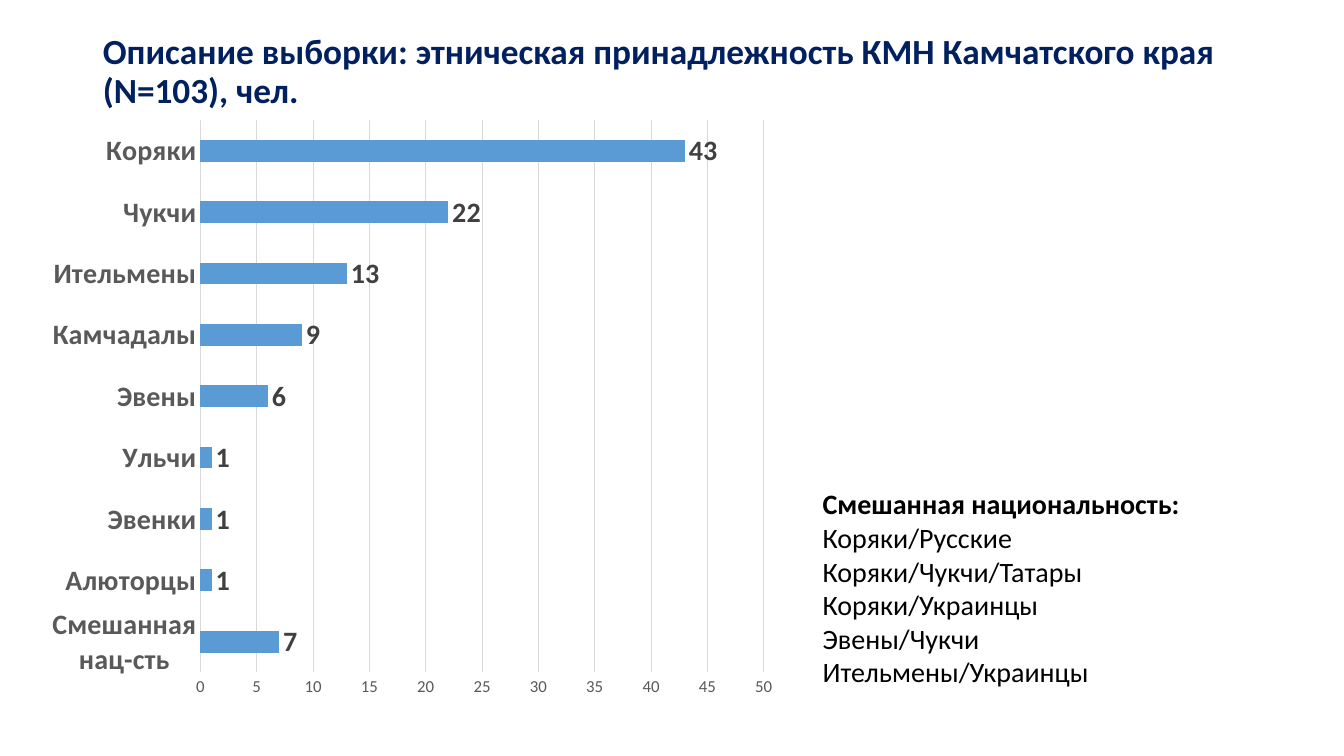
from lxml import etree
from pptx import Presentation
from pptx.chart.data import CategoryChartData as ChartData
from pptx.dml.color import RGBColor as RGB
from pptx.enum.chart import XL_CHART_TYPE as Kind
from pptx.enum.chart import XL_LABEL_POSITION as Place
from pptx.enum.chart import XL_TICK_MARK as Tick
from pptx.enum.text import MSO_ANCHOR as Anchor
from pptx.enum.text import MSO_AUTO_SIZE as Fit
from pptx.oxml.ns import qn
from pptx.util import Inches, Pt

COLORS = {"title": "002060", "text": "000000", "axis": "595959",
          "label": "404040", "grid": "D9D9D9", "bar": "5B9BD5"}
PEOPLES = {"Смешанная нац-сть": 7, "Алюторцы": 1, "Эвенки": 1,
           "Ульчи": 1, "Эвены": 6, "Камчадалы": 9,
           "Ительмены": 13, "Чукчи": 22, "Коряки": 43}
MIXED = ["Смешанная национальность:", "Коряки/Русские",
         "Коряки/Чукчи/Татары", "Коряки/Украинцы",
         "Эвены/Чукчи", "Ительмены/Украинцы"]


class Page:
    face = "Calibri"

    def __init__(self, deck):
        self.slide = deck.slides.add_slide(deck.slide_layouts[5])

    def style(self, font, size, color, bold=False):
        font.name, font.size, font.bold = self.face, Pt(size), bold
        font.color.rgb = RGB.from_string(COLORS[color])

    def title(self, text, box):
        shape = self.slide.shapes.title
        shape.left, shape.top, shape.width, shape.height = map(Inches, box)
        frame = shape.text_frame
        frame.text = text
        frame.word_wrap, frame.auto_size = True, Fit.NONE
        frame.vertical_anchor = Anchor.MIDDLE
        par = frame.paragraphs[0]
        par.alignment, par.line_spacing = 1, 0.9
        self.style(par.runs[0].font, 25.2, "title", True)

    def note(self, lines, box):
        shape = self.slide.shapes.add_textbox(*map(Inches, box))
        frame = shape.text_frame
        frame.text = "\n".join(lines)
        frame.word_wrap, frame.auto_size = True, Fit.SHAPE_TO_FIT_TEXT
        for i, par in enumerate(frame.paragraphs):
            self.style(par.runs[0].font, 20, "text", i == 0)

    def line(self, form):
        form.line.color.rgb = RGB.from_string(COLORS["grid"])
        form.line.width = Pt(0.75)

    def bars(self, values, box, area):
        data = ChartData()
        data.categories = list(values)
        data.add_series("Человек", list(values.values()))
        chart = self.slide.shapes.add_chart(
            Kind.BAR_CLUSTERED, *map(Inches, box), data).chart
        chart.has_legend = chart.has_title = False
        self.style(chart.font, 10, "text")

        # Axes and grid
        cat, val = chart.category_axis, chart.value_axis
        for axis in (cat, val):
            axis.major_tick_mark = axis.minor_tick_mark = Tick.NONE
        self.style(cat.tick_labels.font, 20, "axis", True)
        self.style(val.tick_labels.font, 12, "axis")
        val.minimum_scale, val.maximum_scale, val.major_unit = 0, 50, 5
        val.has_major_gridlines = True
        self.line(cat.format)
        self.line(val.major_gridlines.format)
        val.format.line.fill.background()

        # Bars and their values
        plot = chart.plots[0]
        plot.gap_width, plot.vary_by_categories = 182, False
        fill = plot.series[0].format.fill
        fill.solid()
        fill.fore_color.rgb = RGB.from_string(COLORS["bar"])
        plot.has_data_labels = True
        labels = plot.data_labels
        labels.show_value, labels.position = True, Place.OUTSIDE_END
        self.style(labels.font, 20, "label", True)
        self.inset(chart, area)

    def inset(self, chart, area):
        root = chart.plots[0].series[0]._element.getparent().getparent()
        for old in root.findall(qn("c:layout")):
            root.remove(old)
        layout = etree.Element(qn("c:layout"))
        root.insert(0, layout)
        manual = etree.SubElement(layout, qn("c:manualLayout"))
        parts = [("layoutTarget", "inner"), ("xMode", "edge"),
                 ("yMode", "edge"), *zip("xywh", area)]
        for name, value in parts:
            etree.SubElement(manual, qn("c:" + name), val=str(value))


def main():
    deck = Presentation()
    deck.slide_width, deck.slide_height = Inches(13.33), Inches(7.5)
    page = Page(deck)
    page.title("Описание выборки: этническая принадлежность КМН "
               "Камчатского края (N=103), чел.", (0.92, 0.4, 12.08, 0.64))
    page.bars(PEOPLES, (0.23, 1.04, 7.48, 6.03), (0.235, 0.025, 0.747, 0.909))
    page.note(MIXED, (8.06, 4.78, 4.02, 2.42))
    deck.save("out.pptx")


if __name__ == "__main__":
    main()
